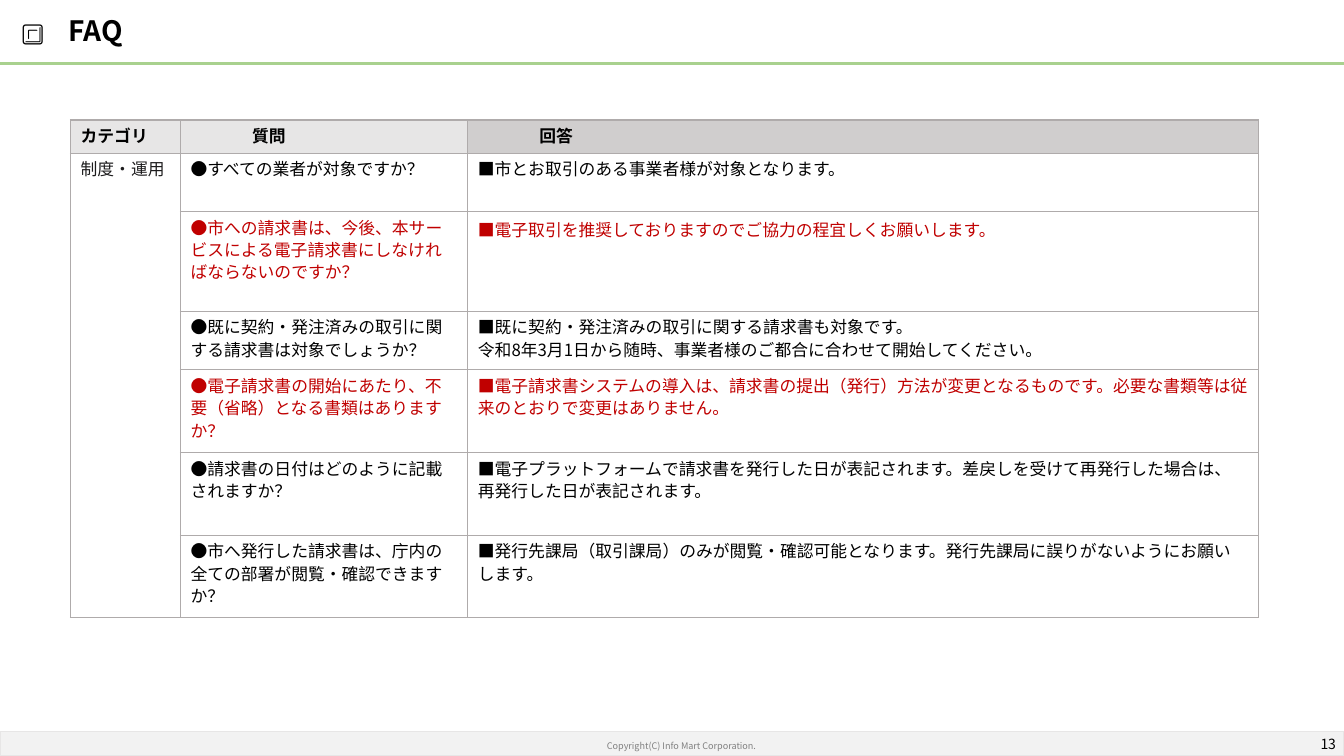
"""Build the FAQ slide with its table of questions and answers."""
from typing import NamedTuple

import pptx
import pptx.dml.color
import pptx.enum.shapes
import pptx.enum.text
import pptx.oxml
import pptx.oxml.ns
import pptx.util

EMU_PER_PX = 9144
FONT = "Noto Sans CJK JP"
BLACK, RED, WHITE = "000000", "C00000", "FFFFFF"
GREY, DARK_GREY, BORDER = "E7E6E6", "D0CECE", "AFABAB"
ALIGN = pptx.enum.text.PP_ALIGN
MIDDLE = pptx.enum.text.MSO_ANCHOR.MIDDLE
TOP = pptx.enum.text.MSO_ANCHOR.TOP


class Label(NamedTuple):
    text: str
    left: int
    top: int
    width: int
    height: int
    size: float
    color: str = BLACK
    bold: bool = False
    align: ALIGN = ALIGN.LEFT
    margin_x: int = 10
    margin_y: int = 5


class Heading(NamedTuple):
    text: str
    width: int
    fill: str
    indent: int


class Faq(NamedTuple):
    question: str
    answer: str
    height: int
    color: str = BLACK
    align: ALIGN = ALIGN.LEFT
    line_height: int | None = 16


LABELS = [
    Label("Copyright(C) Info Mart Corporation.", 475, 729, 402, 21, 6.5, "808080",
          align=ALIGN.CENTER),
    Label("13", 1269, 723, 64, 30, 10, align=ALIGN.RIGHT, margin_x=8, margin_y=4),
    Label("🔳", 12, 14, 74, 37, 16),
    Label("FAQ", 58, 8, 1080, 44, 20, bold=True),
]
HEADINGS = [
    Heading("カテゴリ", 109, GREY, 0),
    Heading("質問", 285, GREY, 61),
    Heading("回答", 784, DARK_GREY, 61),
]
HEADING_HEIGHT = 33
CATEGORY = "制度・運用"
FAQS = [
    Faq("●すべての業者が対象ですか？", "■市とお取引のある事業者様が対象となります。", 58),
    Faq("●市への請求書は、今後、本サービスによる電子請求書にしなければならないのですか？",
        "■電子取引を推奨しておりますのでご協力の程宜しくお願いします。", 99, RED,
        ALIGN.JUSTIFY, None),
    Faq("●既に契約・発注済みの取引に関する請求書は対象でしょうか？",
        "■既に契約・発注済みの取引に関する請求書も対象です。\n"
        "令和8年3月1日から随時、事業者様のご都合に合わせて開始してください。", 58),
    Faq("●電子請求書の開始にあたり、不要（省略）となる書類はありますか？",
        "■電子請求書システムの導入は、請求書の提出（発行）方法が変更となるものです。"
        "必要な書類等は従来のとおりで変更はありません。", 82, RED),
    Faq("●請求書の日付はどのように記載されますか？",
        "■電子プラットフォームで請求書を発行した日が表記されます。"
        "差戻しを受けて再発行した場合は、再発行した日が表記されます。", 82),
    Faq("●市へ発行した請求書は、庁内の全ての部署が閲覧・確認できますか？",
        "■発行先課局（取引課局）のみが閲覧・確認可能となります。"
        "発行先課局に誤りがないようにお願いします。", 82),
]


def px(length: int) -> int:
    """Turn a length in px into EMU."""
    return pptx.util.Emu(length * EMU_PER_PX)


def rgb(value: str) -> pptx.dml.color.RGBColor:
    """Turn a hex string into a colour."""
    return pptx.dml.color.RGBColor.from_string(value)


def write_text(frame, text: str, *, size: float = 12, color: str = BLACK,
               bold: bool = False, align: ALIGN = ALIGN.LEFT,
               line_height: int | None = None, indent: int = 0) -> None:
    """Fill a text frame, one paragraph for each line of text."""
    frame.word_wrap = True
    for index, line in enumerate(text.split("\n")):
        paragraph = frame.add_paragraph() if index else frame.paragraphs[0]
        paragraph.alignment = align
        if line_height:
            paragraph.line_spacing = pptx.util.Pt(line_height)
        if indent:
            paragraph._p.get_or_add_pPr().set("marL", str(px(indent)))
        run = paragraph.add_run()
        run.text = line
        run.font.size = pptx.util.Pt(size)
        run.font.bold = bold
        run.font.color.rgb = rgb(color)
        run.font.name = FONT
        latin = run.font._element.find(pptx.oxml.ns.qn("a:latin"))
        latin.addnext(pptx.oxml.parse_xml(
            f'<a:ea {pptx.oxml.ns.nsdecls("a")} typeface="{FONT}"/>'))


def add_label(slide, label: Label) -> None:
    """Add a text box."""
    box = slide.shapes.add_textbox(
        px(label.left), px(label.top), px(label.width), px(label.height))
    frame = box.text_frame
    frame.vertical_anchor = MIDDLE
    frame.margin_left = frame.margin_right = px(label.margin_x)
    frame.margin_top = frame.margin_bottom = px(label.margin_y)
    write_text(frame, label.text, size=label.size, color=label.color,
               bold=label.bold, align=label.align)


def add_footer_bar(slide) -> None:
    """Add the grey bar along the bottom edge."""
    bar = slide.shapes.add_shape(
        pptx.enum.shapes.MSO_SHAPE.ROUNDED_RECTANGLE, 0, px(726), px(1333), px(24))
    bar.adjustments[0] = 0
    bar.shadow.inherit = False
    bar.fill.solid()
    bar.fill.fore_color.rgb = rgb("F2F2F2")
    bar.line.color.rgb = rgb(GREY)
    bar.line.width = pptx.util.Pt(1)


def add_title_rule(slide) -> None:
    """Add the green line under the title."""
    rule = slide.shapes.add_connector(
        pptx.enum.shapes.MSO_CONNECTOR.STRAIGHT, 0, px(63), px(1333), px(63))
    rule.line.color.rgb = rgb("A9D18E")
    rule.line.width = pptx.util.Pt(2)
    rule._element.spPr.append(pptx.oxml.parse_xml(
        f'<a:effectLst {pptx.oxml.ns.nsdecls("a")}/>'))


def style_cell(cell, fill: str, anchor) -> None:
    """Give a cell its fill, anchor and four borders."""
    cell.fill.solid()
    cell.fill.fore_color.rgb = rgb(fill)
    cell.vertical_anchor = anchor
    properties = cell._tc.get_or_add_tcPr()
    for index, side in enumerate("LRTB"):
        properties.insert(index, pptx.oxml.parse_xml(
            f'<a:ln{side} {pptx.oxml.ns.nsdecls("a")} w="{pptx.util.Pt(1)}">'
            f'<a:solidFill><a:srgbClr val="{BORDER}"/></a:solidFill></a:ln{side}>'))


def add_faq_table(slide) -> None:
    """Add the table of questions and answers."""
    heights = [HEADING_HEIGHT, *(faq.height for faq in FAQS)]
    table = slide.shapes.add_table(
        len(heights), len(HEADINGS), px(70), px(119),
        px(sum(heading.width for heading in HEADINGS)), px(sum(heights))).table
    table.first_row = table.horz_banding = False
    for row, height in zip(table.rows, heights):
        row.height = px(height)
    for index, heading in enumerate(HEADINGS):
        table.columns[index].width = px(heading.width)
        cell = table.cell(0, index)
        style_cell(cell, heading.fill, MIDDLE)
        write_text(cell.text_frame, heading.text, bold=True, line_height=16,
                   indent=heading.indent)
    for index, faq in enumerate(FAQS, start=1):
        category, question, answer = (table.cell(index, column) for column in range(3))
        for cell in (category, question, answer):
            style_cell(cell, WHITE, TOP)
        write_text(question.text_frame, faq.question, color=faq.color, line_height=16)
        write_text(answer.text_frame, faq.answer, color=faq.color, align=faq.align,
                   line_height=faq.line_height)
    category = table.cell(1, 0)
    category.merge(table.cell(len(FAQS), 0))
    write_text(category.text_frame, CATEGORY, color="1D1C1D", line_height=16)


def main() -> None:
    """Build and save the presentation."""
    presentation = pptx.Presentation()
    presentation.slide_width, presentation.slide_height = px(1333), px(750)
    slide = presentation.slides.add_slide(presentation.slide_layouts[6])
    add_footer_bar(slide)
    add_title_rule(slide)
    add_faq_table(slide)
    for label in LABELS:
        add_label(slide, label)
    presentation.save("out.pptx")


if __name__ == "__main__":
    main()
